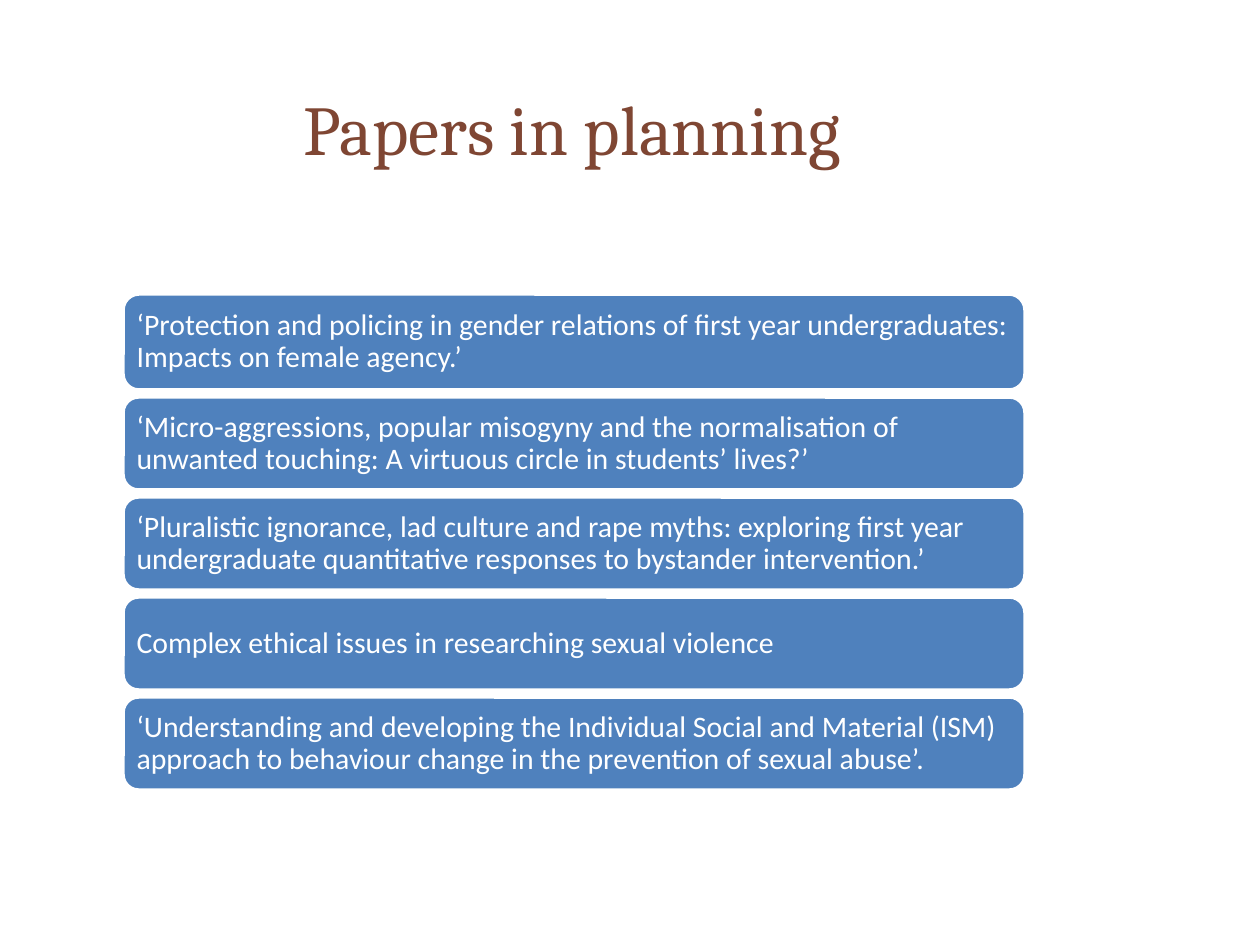
from pptx import Presentation
from pptx.dml.color import RGBColor
from pptx.enum.shapes import MSO_SHAPE
from pptx.enum.text import MSO_ANCHOR, PP_ALIGN
from pptx.util import Emu, Pt

ROUNDED = MSO_SHAPE.ROUNDED_RECTANGLE
TOP, MIDDLE = MSO_ANCHOR.TOP, MSO_ANCHOR.MIDDLE
LEFT, CENTER = PP_ALIGN.LEFT, PP_ALIGN.CENTER

BROWN = RGBColor(0x7F, 0x46, 0x33)
BLUE = RGBColor(0x4F, 0x81, 0xBD)
WHITE = RGBColor(0xFF, 0xFF, 0xFF)

PX_PER_INCH = 126
CARD_LEFT, CARD_WIDTH = 123, 902
CARD_GAP = 7

# Each paper: card height, title
PAPERS = [
    (96, "‘Protection and policing in gender relations of first year "
         "undergraduates: Impacts on female agency.’"),
    (93, "‘Micro-aggressions, popular misogyny and the normalisation of "
         "unwanted touching: A virtuous circle in students’ lives?’"),
    (93, "‘Pluralistic ignorance, lad culture and rape myths: exploring first "
         "year undergraduate quantitative responses to bystander intervention.’"),
    (93, "Complex ethical issues in researching sexual violence"),
    (93, "‘Understanding and developing the Individual Social and Material "
         "(ISM) approach to behaviour change in the prevention of sexual "
         "abuse’."),
]


def px(length):
    return Emu(round(length * 914400 / PX_PER_INCH))


def set_text(shape, text, *, font, size, color, align=LEFT, anchor=TOP,
             inset=0, line_spacing=1.0):
    frame = shape.text_frame
    frame.word_wrap = True
    frame.vertical_anchor = anchor
    frame.margin_left = frame.margin_right = px(inset)
    frame.margin_top = frame.margin_bottom = px(inset)
    paragraph = frame.paragraphs[0]
    paragraph.alignment = align
    paragraph.line_spacing = line_spacing
    run = paragraph.add_run()
    run.text = text
    run.font.name = font
    run.font.size = Pt(size)
    run.font.color.rgb = color


def add_title(slide, text):
    box = slide.shapes.add_textbox(px(123), px(96), px(898), px(87))
    set_text(box, text, font="Cambria", size=40, color=BROWN, align=CENTER,
             line_spacing=Pt(42))


def add_card(slide, top, height, text):
    card = slide.shapes.add_shape(ROUNDED, px(CARD_LEFT), px(top),
                                  px(CARD_WIDTH), px(height))
    card.shadow.inherit = False
    card.fill.solid()
    card.fill.fore_color.rgb = BLUE
    card.line.color.rgb = WHITE
    card.line.width = Pt(2)
    set_text(card, text, font="Calibri", size=17, color=WHITE, anchor=MIDDLE,
             inset=9, line_spacing=0.9)


def main():
    presentation = Presentation()
    presentation.slide_width = px(1260)
    presentation.slide_height = px(945)
    slide = presentation.slides.add_slide(presentation.slide_layouts[6])

    # Heading
    add_title(slide, "Papers in planning")

    # Stack of planned papers
    top = 294
    for height, text in PAPERS:
        add_card(slide, top, height, text)
        top += height + CARD_GAP

    presentation.save("out.pptx")


if __name__ == "__main__":
    main()
